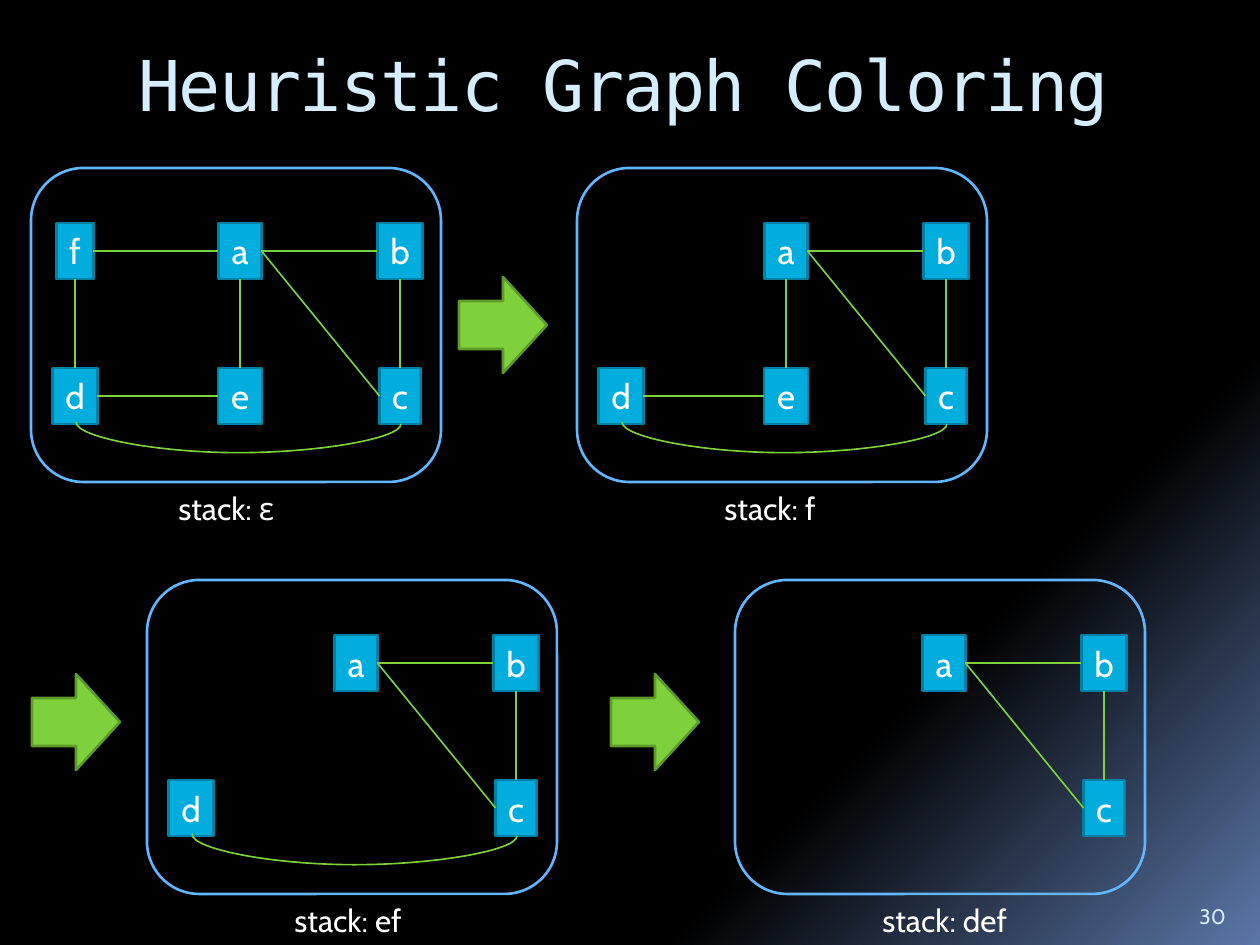
import lxml.etree
import pptx
import pptx.dml.color
import pptx.enum.shapes
import pptx.enum.text
import pptx.oxml.ns
import pptx.util

SHAPE = pptx.enum.shapes.MSO_SHAPE
CONNECTOR = pptx.enum.shapes.MSO_CONNECTOR
ANCHOR = pptx.enum.text.MSO_ANCHOR
FIT = pptx.enum.text.MSO_AUTO_SIZE
TOP, LEFT, BOTTOM, RIGHT = range(4)

TITLE = "Heuristic Graph Coloring"
PAGE_NUMBER = "30"
PANELS = [
    {"at": (31, 168), "nodes": "fabdec", "stack": "stack: ε", "caption_width": 123},
    {"at": (577, 168), "nodes": "abdec", "stack": "stack: f", "caption_width": 120},
    {"at": (147, 580), "nodes": "abdc", "stack": "stack: ef", "caption_width": 135},
    {"at": (735, 580), "nodes": "abc", "stack": "stack: def", "caption_width": 152},
]
NODES = {
    "f": (0, 0, 37), "a": (1, 0, 43), "b": (2, 0, 45),
    "d": (0, 1, 45), "e": (1, 1, 44), "c": (2, 1, 41),
}
EDGES = [
    ("f", RIGHT, "a", LEFT), ("a", RIGHT, "b", LEFT), ("f", BOTTOM, "d", TOP),
    ("e", LEFT, "d", RIGHT), ("a", BOTTOM, "e", TOP), ("b", BOTTOM, "c", TOP),
    ("a", RIGHT, "c", LEFT),
]
ARROWS = [(459, 277), (32, 674), (611, 674)]

PANEL_SIZE = (410, 314)
ARROW_SIZE = (88, 96)
COLUMNS = (44, 209, 369)
ROWS = (55, 200)
NODE_HEIGHT = 56
CAPTION = {"left": 135, "top": 315, "height": 50}
ARC = {"left": 45, "right": 370, "top": 254, "rise": 2, "depth": 31}

THEME = {
    "body": "Cabin", "mono": "DejaVu Sans Mono",
    "title": 40, "node": 20, "caption": 18, "number": 12,
    "pale": "D6ECFF", "white": "FFFFFF",
    "node_fill": "00ADDC", "node_line": "0080A3",
    "arrow_fill": "7FD13B", "arrow_line": "5E9B2C",
    "edge": "7FD13B", "panel": "61B6FF",
    "outline": 1.5, "edge_width": 0.94,
    "background": [(65, "000000"), (73, "000000"), (100, "5B77A8")],
}


def px(value):
    return pptx.util.Emu(round(value * 914400 / 126))


def color(name):
    return pptx.dml.color.RGBColor.from_string(THEME[name])


def xml_child(parent, tag, **values):
    child = lxml.etree.SubElement(parent, pptx.oxml.ns.qn(tag))
    for key, value in values.items():
        child.set(key, str(value))
    return child


def set_text(shape, text, size, font="body", ink="white", **frame_format):
    frame = shape.text_frame
    for key, value in frame_format.items():
        setattr(frame, key, value)
    span = frame.paragraphs[0].add_run()
    span.text = text
    for key, value in {"name": THEME[font], "size": pptx.util.Pt(THEME[size])}.items():
        setattr(span.font, key, value)
    span.font.color.rgb = color(ink)
    return span


def add_text(page, bounds, *content, **frame_format):
    box = page.shapes.add_textbox(*map(px, bounds))
    return set_text(box, *content, **frame_format)


def add_shape(page, kind, bounds, line, fill=None):
    shape = page.shapes.add_shape(kind, *map(px, bounds))
    shape.shadow.inherit = False
    if fill:
        shape.fill.solid()
        shape.fill.fore_color.rgb = color(fill)
    else:
        shape.fill.background()
    shape.line.color.rgb = color(line)
    shape.line.width = pptx.util.Pt(THEME["outline"])
    return shape


def add_edge(page, kind, ends=(0, 0, 0, 0)):
    edge = page.shapes.add_connector(kind, *map(px, ends))
    edge.line.color.rgb = color("edge")
    edge.line.width = pptx.util.Pt(THEME["edge_width"])
    xml_child(edge._element.spPr, "a:effectLst")
    return edge


def add_arc(page, x, y):
    middle = x + (ARC["left"] + ARC["right"]) / 2
    half_span = (ARC["right"] - ARC["left"]) / 2
    half_rise = ARC["rise"] / 2
    center = y + ARC["top"] + half_rise
    arc = add_edge(page, CONNECTOR.CURVE, (
        middle + half_rise, center - half_span, middle - half_rise, center + half_span))
    properties = arc._element.spPr
    properties.xfrm.set("rot", str(270 * 60000))
    guides = properties.find(".//" + pptx.oxml.ns.qn("a:avLst"))
    bend = round(ARC["depth"] / ARC["rise"] * 100000)
    xml_child(guides, "a:gd", name="adj1", fmla=f"val {bend}")


def add_panel(page, panel):
    x, y = panel["at"]
    boxes = {}
    for name in panel["nodes"]:
        column, row, width = NODES[name]
        bounds = (x + COLUMNS[column] - width / 2, y + ROWS[row], width, NODE_HEIGHT)
        boxes[name] = add_shape(page, SHAPE.RECTANGLE, bounds, "node_line", "node_fill")
        set_text(boxes[name], name, "node", word_wrap=False, auto_size=FIT.SHAPE_TO_FIT_TEXT)
    for start, start_side, end, end_side in EDGES:
        if start in boxes and end in boxes:
            edge = add_edge(page, CONNECTOR.STRAIGHT)
            edge.begin_connect(boxes[start], start_side)
            edge.end_connect(boxes[end], end_side)
    if "d" in boxes and "c" in boxes:
        add_arc(page, x, y)
    add_shape(page, SHAPE.ROUNDED_RECTANGLE, (x, y, *PANEL_SIZE), "panel")
    bounds = (x + CAPTION["left"], y + CAPTION["top"], panel["caption_width"], CAPTION["height"])
    add_text(page, bounds, panel["stack"], "caption",
             word_wrap=False, auto_size=FIT.SHAPE_TO_FIT_TEXT)


def paint_background(page):
    fill = page.background.fill
    fill.gradient()
    fill.gradient_angle = 315
    stops = page._element.find(".//" + pptx.oxml.ns.qn("a:gsLst"))
    for stop in list(stops):
        stops.remove(stop)
    for percent, shade in THEME["background"]:
        stop = xml_child(stops, "a:gs", pos=percent * 1000)
        xml_child(stop, "a:srgbClr", val=shade)


def main():
    deck = pptx.Presentation()
    deck.slide_width, deck.slide_height = px(1260), px(945)
    page = deck.slides.add_slide(deck.slide_layouts[6])
    paint_background(page)
    add_text(page, (1187, 885, 63, 50), PAGE_NUMBER, "number", "body", "pale",
             word_wrap=True, vertical_anchor=ANCHOR.BOTTOM)
    title = add_text(page, (126, 31, 1071, 126), TITLE, "title", "mono", "pale",
                     word_wrap=True, margin_top=px(11))
    title.font._element.set("spc", "-100")
    for panel in PANELS:
        add_panel(page, panel)
    for place in ARROWS:
        add_shape(page, SHAPE.RIGHT_ARROW, (*place, *ARROW_SIZE), "arrow_line", "arrow_fill")
    deck.save("out.pptx")


if __name__ == "__main__":
    main()
